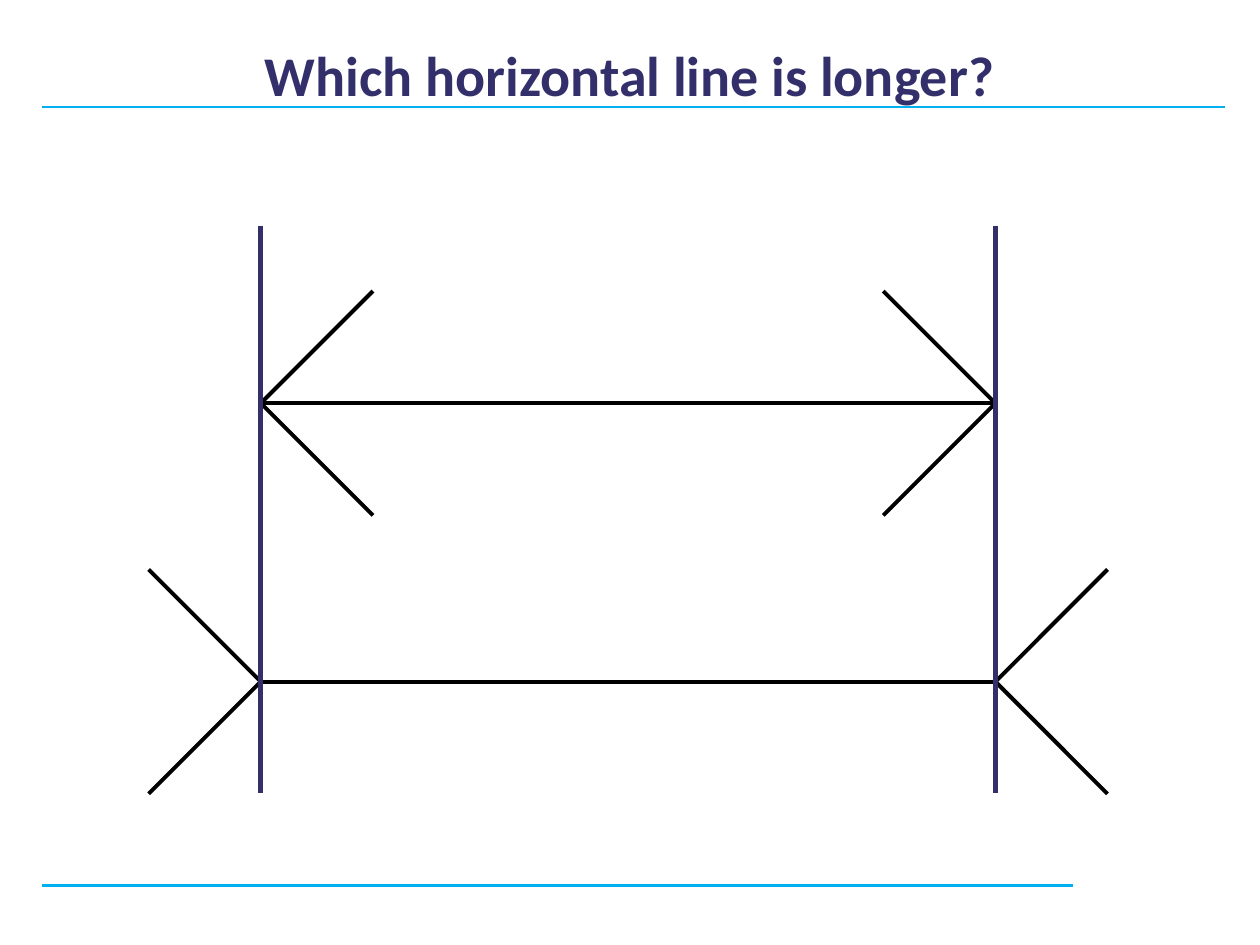
from lxml import etree
from pptx import Presentation
from pptx.dml.color import RGBColor
from pptx.enum.shapes import MSO_CONNECTOR as Connector
from pptx.enum.text import MSO_ANCHOR as Anchor, PP_ALIGN as Align
from pptx.oxml.ns import qn
from pptx.util import Inches, Pt

NAVY = RGBColor(0x33, 0x2F, 0x6B)
CYAN = RGBColor(0x00, 0xB0, 0xF0)
BLACK = RGBColor(0x00, 0x00, 0x00)

LEFT_END = 2.07
RIGHT_END = 7.9
FIN_LENGTH = 0.89


def add_line(shapes, start, end, color, width):
    points = [Inches(value) for value in (*start, *end)]
    line = shapes.add_connector(Connector.STRAIGHT, *points)
    line.line.color.rgb = color
    line.line.width = Pt(width)
    etree.SubElement(line._element.spPr, qn("a:effectLst"))


def add_title(slide, text):
    box = slide.shapes.add_textbox(Inches(0.69), Inches(0.4), Inches(8.62), Inches(0.45))
    frame = box.text_frame
    frame.text = text
    frame.word_wrap = True
    frame.vertical_anchor = Anchor.MIDDLE
    paragraph = frame.paragraphs[0]
    paragraph.alignment = Align.CENTER
    paragraph.line_spacing = 0.9
    font = paragraph.runs[0].font
    font.name = "Calibri"
    font.size = Pt(32)
    font.bold = True
    font.color.rgb = NAVY


def add_fins(slide, x, y, direction):
    group = slide.shapes.add_group_shape()
    for vertical in (-1, 1):
        tip = (x + direction * FIN_LENGTH, y + vertical * FIN_LENGTH)
        add_line(group.shapes, (x, y), tip, BLACK, 2.25)


def add_illusion_line(slide, y, left_direction):
    add_line(slide.shapes, (LEFT_END, y), (RIGHT_END, y), BLACK, 2.25)
    add_fins(slide, LEFT_END, y, left_direction)
    add_fins(slide, RIGHT_END, y, -left_direction)


def main():
    presentation = Presentation()
    presentation.slide_width = Inches(10)
    presentation.slide_height = Inches(7.5)
    slide = presentation.slides.add_slide(presentation.slide_layouts[6])

    for y, right in ((7.03, 8.52), (0.85, 9.72)):
        add_line(slide.shapes, (0.33, y), (right, y), CYAN, 1.5)
    add_title(slide, "Which horizontal line is longer?")
    add_illusion_line(slide, 3.2, 1)
    add_illusion_line(slide, 5.41, -1)
    for x in (LEFT_END, RIGHT_END):
        add_line(slide.shapes, (x, 1.79), (x, 6.29), NAVY, 3)

    presentation.save("out.pptx")


if __name__ == "__main__":
    main()
